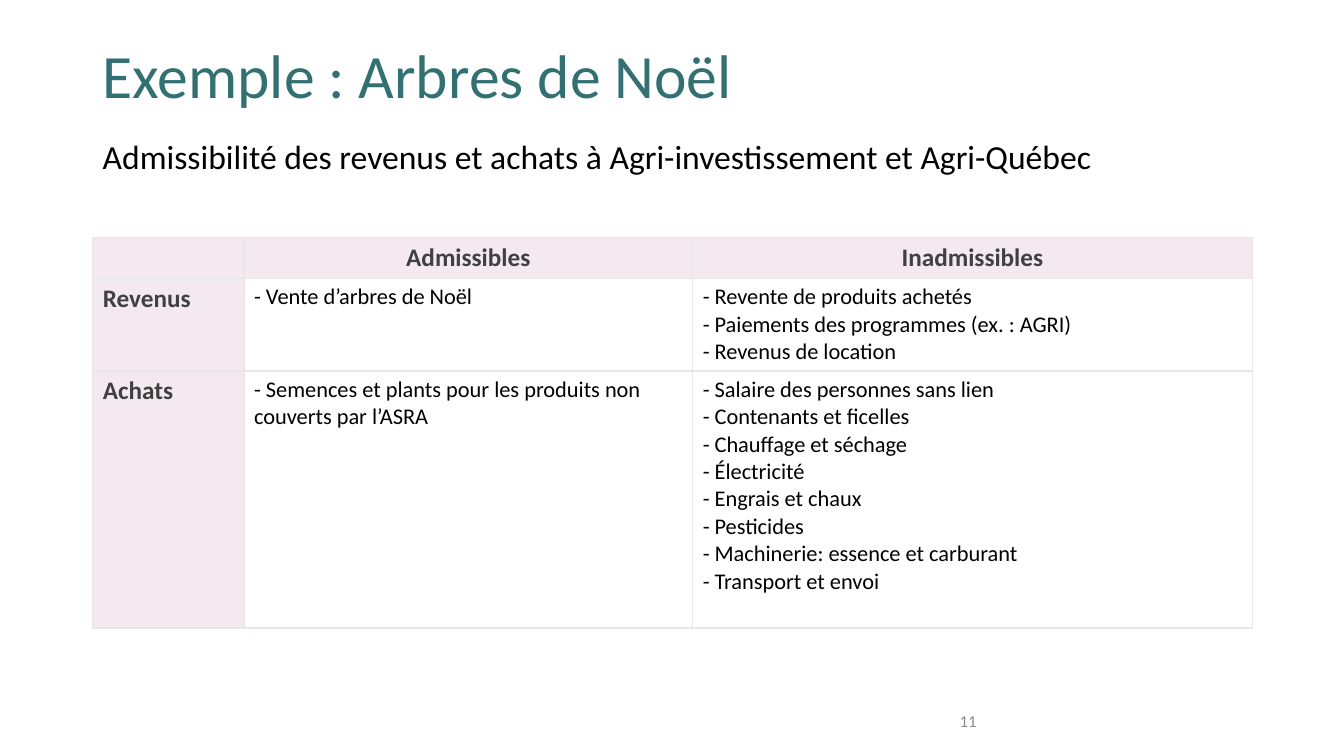
from dataclasses import dataclass

from lxml.etree import SubElement
from pptx import Presentation
from pptx.dml.color import RGBColor
from pptx.enum.text import MSO_ANCHOR, PP_ALIGN
from pptx.oxml.ns import qn
from pptx.util import Inches, Pt


@dataclass(frozen=True)
class Theme:
    font: str = "Calibri"
    title_color: str = "327072"
    text_color: str = "000000"
    heading_color: str = "404040"
    number_color: str = "8C8C8C"
    heading_fill: str = "F3E9EE"
    border_color: str = "E7E7E7"
    title_size: int = 44
    subtitle_size: int = 24
    heading_size: int = 18
    body_size: int = 16
    number_size: int = 12


theme = Theme()


def write_lines(text_frame, lines, size, color, bold=False, alignment=PP_ALIGN.LEFT):
    for index, line in enumerate(lines):
        paragraph = text_frame.paragraphs[0] if index == 0 else text_frame.add_paragraph()
        paragraph.alignment = alignment
        run = paragraph.add_run()
        run.text = line
        run.font.name = theme.font
        run.font.size = Pt(size)
        run.font.bold = bold
        run.font.color.rgb = RGBColor.from_string(color)


def add_borders(cell):
    properties = cell._tc.get_or_add_tcPr()
    for side in ("a:lnL", "a:lnR", "a:lnT", "a:lnB"):
        line = SubElement(properties, qn(side), w=str(Pt(1)))
        fill = SubElement(line, qn("a:solidFill"))
        SubElement(fill, qn("a:srgbClr"), val=theme.border_color)


presentation = Presentation()
presentation.slide_width = Inches(13.33)
presentation.slide_height = Inches(7.5)
slide = presentation.slides.add_slide(presentation.slide_layouts[6])

# Title, subtitle and page number
text_boxes = [
    ("Exemple : Arbres de Noël", (0.92, 0.4, 11.5, 0.9),
     theme.title_size, theme.title_color, MSO_ANCHOR.TOP, 0.9),
    ("Admissibilité des revenus et achats à Agri-investissement et Agri-Québec",
     (0.92, 1.3, 11.18, 0.5), theme.subtitle_size, theme.text_color, MSO_ANCHOR.TOP, 1.0),
    ("11", (9.42, 6.95, 3, 0.4),
     theme.number_size, theme.number_color, MSO_ANCHOR.MIDDLE, 1.0),
]
for text, place, size, color, anchor, line_spacing in text_boxes:
    text_frame = slide.shapes.add_textbox(*map(Inches, place)).text_frame
    text_frame.word_wrap = True
    text_frame.vertical_anchor = anchor
    write_lines(text_frame, [text], size, color)
    text_frame.paragraphs[0].line_spacing = line_spacing

# Eligibility table
column_widths = [1.5, 4.45, 5.55]
row_heights = [0.4, 0.92, 2.55]
table_rows = [
    [[], ["Admissibles"], ["Inadmissibles"]],
    [
        ["Revenus"],
        ["- Vente d’arbres de Noël"],
        [
            "- Revente de produits achetés",
            "- Paiements des programmes (ex. : AGRI)",
            "- Revenus de location",
        ],
    ],
    [
        ["Achats"],
        ["- Semences et plants pour les produits non couverts par l’ASRA"],
        [
            "- Salaire des personnes sans lien",
            "- Contenants et ficelles",
            "- Chauffage et séchage",
            "- Électricité",
            "- Engrais et chaux",
            "- Pesticides",
            "- Machinerie: essence et carburant",
            "- Transport et envoi",
        ],
    ],
]
table = slide.shapes.add_table(
    len(row_heights), len(column_widths), Inches(0.92), Inches(2.36),
    Inches(sum(column_widths)), Inches(sum(row_heights)),
).table
table.first_row = False
table.horz_banding = False
for column, width in zip(table.columns, column_widths):
    column.width = Inches(width)

for row_index, (row_height, row_cells) in enumerate(zip(row_heights, table_rows)):
    table.rows[row_index].height = Inches(row_height)
    for column_index, lines in enumerate(row_cells):
        cell = table.cell(row_index, column_index)
        add_borders(cell)
        if row_index == 0 or column_index == 0:
            cell.fill.solid()
            cell.fill.fore_color.rgb = RGBColor.from_string(theme.heading_fill)
            alignment = PP_ALIGN.CENTER if row_index == 0 else PP_ALIGN.LEFT
            write_lines(cell.text_frame, lines, theme.heading_size,
                        theme.heading_color, True, alignment)
        else:
            cell.fill.background()
            write_lines(cell.text_frame, lines, theme.body_size, theme.text_color)

presentation.save("out.pptx")
